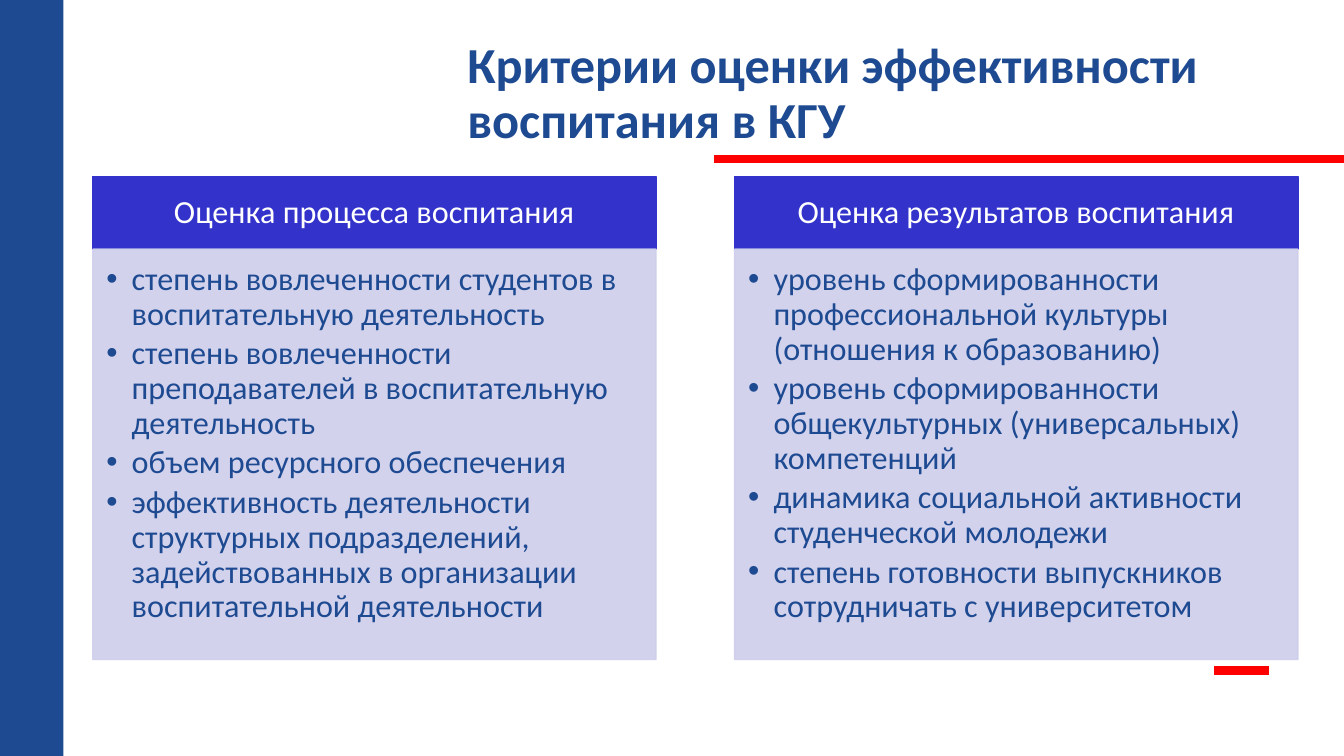
from lxml import etree
from pptx import Presentation
from pptx.dml.color import RGBColor
from pptx.enum.shapes import MSO_CONNECTOR, MSO_SHAPE
from pptx.enum.text import MSO_ANCHOR, PP_ALIGN
from pptx.oxml.ns import qn
from pptx.util import Cm, Pt

RECTANGLE = MSO_SHAPE.RECTANGLE
STRAIGHT = MSO_CONNECTOR.STRAIGHT
LEFT, CENTER = PP_ALIGN.LEFT, PP_ALIGN.CENTER
TOP, MIDDLE, BOTTOM = MSO_ANCHOR.TOP, MSO_ANCHOR.MIDDLE, MSO_ANCHOR.BOTTOM

NAVY = RGBColor(0x1E, 0x4A, 0x91)
INDIGO = RGBColor(0x33, 0x33, 0xCC)
LAVENDER = RGBColor(0xCE, 0xCE, 0xEC)
RED = RGBColor(0xFF, 0x00, 0x00)
WHITE = RGBColor(0xFF, 0xFF, 0xFF)

FONT = "Calibri"
SLIDE_WIDTH, SLIDE_HEIGHT = 33.88, 19.05
COLUMN_LEFT, COLUMN_STEP, COLUMN_WIDTH = 2.34, 16.18, 14.2
HEADER_TOP, HEADER_HEIGHT, BODY_HEIGHT = 4.45, 1.83, 10.34
BULLET_INDENT = 0.64

TITLE = "Критерии оценки эффективности воспитания в КГУ"
COLUMNS = [
    ("Оценка процесса воспитания", [
        "степень вовлеченности студентов в воспитательную деятельность",
        "степень вовлеченности преподавателей в воспитательную деятельность",
        "объем ресурсного обеспечения",
        "эффективность деятельности структурных подразделений, "
        "задействованных в организации воспитательной деятельности",
    ]),
    ("Оценка результатов воспитания", [
        "уровень сформированности профессиональной культуры "
        "(отношения к образованию)",
        "уровень сформированности общекультурных (универсальных) компетенций",
        "динамика социальной активности студенческой молодежи",
        "степень готовности выпускников сотрудничать с университетом",
    ]),
]


def add_bullet(paragraph):
    properties = paragraph._p.get_or_add_pPr()
    properties.set("marL", str(Cm(BULLET_INDENT)))
    properties.set("indent", str(-Cm(BULLET_INDENT)))
    etree.SubElement(properties, qn("a:buFont"), typeface="Arial")
    etree.SubElement(properties, qn("a:buChar"), char="•")


def write_text(shape, texts, size=23, color=NAVY, bold=False, align=LEFT,
               anchor=TOP, insets=(0.25, 0.13, 0.25, 0.13), space_after=0,
               bullets=False):
    frame = shape.text_frame
    frame.word_wrap = True
    frame.vertical_anchor = anchor
    (frame.margin_left, frame.margin_top,
     frame.margin_right, frame.margin_bottom) = map(Cm, insets)
    for index, text in enumerate(texts):
        paragraph = frame.add_paragraph() if index else frame.paragraphs[0]
        if bullets:
            add_bullet(paragraph)
        paragraph.alignment = align
        paragraph.line_spacing = 0.9
        paragraph.space_after = Pt(space_after)
        run = paragraph.add_run()
        run.text = text
        run.font.name = FONT
        run.font.size = Pt(size)
        run.font.bold = bold
        run.font.color.rgb = color


def set_opacity(shape, percent):
    for color in shape._element.spPr.iter(qn("a:srgbClr")):
        etree.SubElement(color, qn("a:alpha"), val=str(percent * 1000))


def add_rectangle(slide, left, top, width, height, color, outlined=True):
    shape = slide.shapes.add_shape(
        RECTANGLE, Cm(left), Cm(top), Cm(width), Cm(height))
    shape.shadow.inherit = False
    shape.fill.solid()
    shape.fill.fore_color.rgb = color
    if outlined:
        shape.line.color.rgb = color
        shape.line.width = Pt(1)
    else:
        shape.line.fill.background()
    return shape


def add_red_line(slide, start, end, y):
    line = slide.shapes.add_connector(STRAIGHT, Cm(start), Cm(y), Cm(end), Cm(y))
    line.line.color.rgb = RED
    line.line.width = Pt(6)
    etree.SubElement(line._element.spPr, qn("a:effectLst"))


def add_column(slide, left, heading, criteria):
    header = add_rectangle(
        slide, left, HEADER_TOP, COLUMN_WIDTH, HEADER_HEIGHT, INDIGO)
    write_text(header, [heading], color=WHITE, align=CENTER, anchor=MIDDLE,
               insets=(0.46, 0.25, 0.46, 0.25))
    body = add_rectangle(slide, left, HEADER_TOP + HEADER_HEIGHT,
                         COLUMN_WIDTH, BODY_HEIGHT, LAVENDER)
    set_opacity(body, 90)
    write_text(body, criteria, insets=(0.34, 0.34, 0.46, 0.5),
               space_after=3.45, bullets=True)


def main():
    presentation = Presentation()
    presentation.slide_width = Cm(SLIDE_WIDTH)
    presentation.slide_height = Cm(SLIDE_HEIGHT)
    slide = presentation.slides.add_slide(presentation.slide_layouts[6])

    # Red accents and side band
    add_red_line(slide, 18.01, SLIDE_WIDTH, 4)
    add_red_line(slide, 30.61, 32, 16.9)
    add_rectangle(slide, 0, 0, 1.6, SLIDE_HEIGHT, NAVY, outlined=False)

    # Title
    title = slide.shapes.add_textbox(Cm(11.53), Cm(0), Cm(21.21), Cm(3.89))
    write_text(title, [TITLE], size=36, bold=True, anchor=BOTTOM)

    # Criteria columns
    for index, (heading, criteria) in enumerate(COLUMNS):
        add_column(slide, COLUMN_LEFT + index * COLUMN_STEP, heading, criteria)

    presentation.save("out.pptx")


if __name__ == "__main__":
    main()
